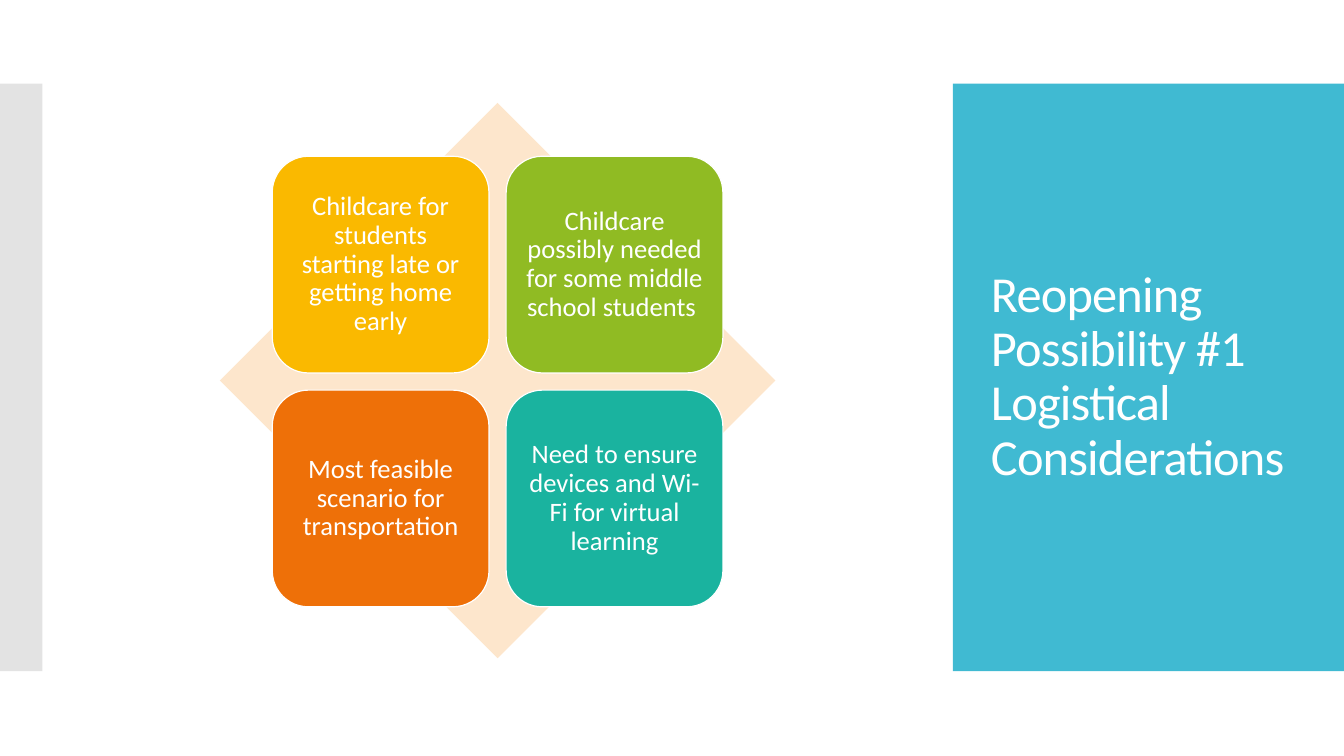
from lxml import etree
from pptx import Presentation
from pptx import util as u
from pptx.dml.color import RGBColor
from pptx.enum import shapes, text
from pptx.oxml.ns import qn

TITLE = "Reopening Possibility #1\vLogistical Considerations"
CONSIDERATIONS = [
    ("Childcare for students starting late or getting home early", "yellow"),
    ("Childcare possibly needed for some middle school students ", "green"),
    ("Most feasible scenario for transportation", "orange"),
    ("Need to ensure devices and Wi-Fi for virtual learning", "teal"),
]
COLORS = {
    "white": "FFFFFF", "blue": "40BAD2", "gray": "C8C8C8", "peach": "FDE6CC",
    "yellow": "FAB900", "green": "90BB23", "orange": "EE7008", "teal": "1AB39F",
}
BAND_TOP, BAND_HEIGHT = 0.83, 5.83
CARD_LEFT, CARD_TOP, CARD_SIZE, CARD_STEP = 2.7, 1.55, 2.15, 2.32
CARD_INSET = 0.08
KIND = shapes.MSO_SHAPE


def color(name):
    """Return the named palette colour."""
    return RGBColor.from_string(COLORS[name])


def add_block(page, kind, box, fill):
    """Add a flat filled shape without an outline."""
    shape = page.shapes.add_shape(kind, *map(u.Inches, box))
    shape.shadow.inherit = False
    shape.fill.solid()
    shape.fill.fore_color.rgb = color(fill)
    shape.line.fill.background()
    return shape


def write(shape, words, size, align, frame_format):
    """Write one white paragraph, centred vertically, and return its font."""
    frame = shape.text_frame
    frame_format = {"word_wrap": True, "vertical_anchor": text.MSO_ANCHOR.MIDDLE, **frame_format}
    for name, value in frame_format.items():
        setattr(frame, name, value)
    para = frame.paragraphs[0]
    para.text = words
    para.alignment = align
    para.line_spacing = 0.9
    for span in para.runs:
        for name, value in {"size": u.Pt(size), "name": "Calibri"}.items():
            setattr(span.font, name, value)
        span.font.color.rgb = color("white")
    return para


def main():
    """Build the slide of logistical considerations."""
    deck = Presentation()
    deck.slide_width, deck.slide_height = u.Inches(13.33), u.Inches(7.5)
    page = deck.slides.add_slide(deck.slide_layouts[6])

    add_block(page, KIND.RECTANGLE, (9.45, BAND_TOP, 3.88, BAND_HEIGHT), "blue")
    title = page.shapes.add_textbox(*map(u.Inches, (9.73, 1.23, 3.22, 5.03)))
    heading = write(title, TITLE, 36, text.PP_ALIGN.LEFT, {})
    for span in heading.runs:
        span.font._element.set("spc", "-60")

    edge = add_block(page, KIND.RECTANGLE, (0, BAND_TOP, 0.42, BAND_HEIGHT), "gray")
    tint = edge.fill._xPr.find(qn("a:solidFill"))[0]
    etree.SubElement(tint, qn("a:alpha")).set("val", "50000")

    add_block(page, KIND.DIAMOND, (2.18, 1.02, 5.51, 5.51), "peach")
    margins = {f"margin_{side}": u.Inches(CARD_INSET) for side in ("left", "top", "right", "bottom")}
    for index, (words, fill) in enumerate(CONSIDERATIONS):
        row, column = divmod(index, 2)
        left, top = CARD_LEFT + column * CARD_STEP, CARD_TOP + row * CARD_STEP
        card = add_block(page, KIND.ROUNDED_RECTANGLE, (left, top, CARD_SIZE, CARD_SIZE), fill)
        card.line.color.rgb = color("white")
        card.line.width = u.Pt(0.85)
        write(card, words, 19, text.PP_ALIGN.CENTER, margins)

    deck.save("out.pptx")


if __name__ == "__main__":
    main()
